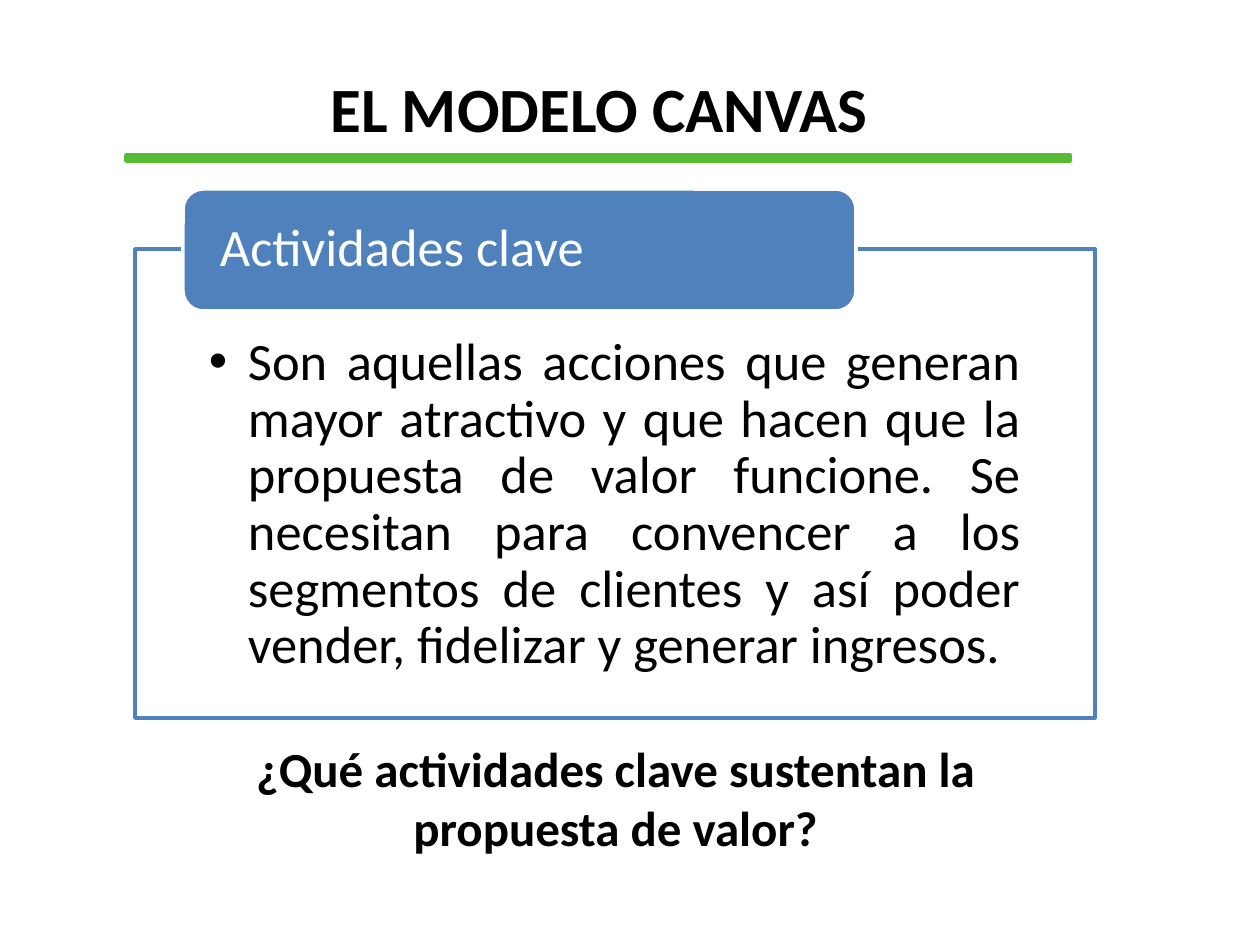
import pptx
import pptx.util
import pptx.dml.color
import pptx.enum.shapes
import pptx.enum.text

SCALE = 914400 / 126
SHAPE = pptx.enum.shapes.MSO_SHAPE
ALIGN = pptx.enum.text.PP_ALIGN
ANCHOR = pptx.enum.text.MSO_ANCHOR
GREEN, BLUE, WHITE, BLACK = "57BC32", "4F81BD", "FFFFFF", "000000"


def px(n):
    return pptx.util.Emu(round(n * SCALE))


def color(code):
    return pptx.dml.color.RGBColor.from_string(code)


def place(shape, box):
    shape.left, shape.top, shape.width, shape.height = map(px, box)


def paint(shape, fill, line):
    shape.fill.solid()
    shape.fill.fore_color.rgb = color(fill)
    shape.line.color.rgb = color(line)
    shape.line.width = pptx.util.Pt(2)


def block(slide, kind, box, fill, line):
    shape = slide.shapes.add_shape(kind, *map(px, box))
    shape.shadow.inherit = False
    paint(shape, fill, line)
    return shape


def write(shape, text, size, hue, align, anchor, insets, bold=False):
    """Fill a shape with one paragraph; insets are left, top, right, bottom."""
    frame = shape.text_frame
    frame.text = text
    frame.word_wrap = True
    frame.auto_size = pptx.enum.text.MSO_AUTO_SIZE.NONE
    frame.vertical_anchor = anchor
    (frame.margin_left, frame.margin_top,
     frame.margin_right, frame.margin_bottom) = map(px, insets)
    para = frame.paragraphs[0]
    para.alignment = align
    para.space_before = pptx.util.Pt(0)
    font = para.runs[0].font
    font.name = "Calibri"
    font.size = pptx.util.Pt(size)
    font.bold = bold
    font.color.rgb = color(hue)
    return para


def header(slide, box):
    left, top, width, height = box
    block(slide, SHAPE.RECTANGLE, (left, top + 92, width, 6), GREEN, GREEN)
    title = slide.shapes.title
    place(title, (left + 158, top, 630, 89))
    write(title, "EL MODELO CANVAS", 36, BLACK, ALIGN.CENTER, ANCHOR.TOP,
          (13, 6, 13, 6), True)


def panel(slide, box):
    left, top, width, height = box
    body = slide.placeholders[1]
    place(body, (left, top + 60, width, height - 60))
    paint(body, WHITE, BLUE)
    para = write(
        body,
        "Son aquellas acciones que generan mayor atractivo y que hacen que "
        "la propuesta de valor funcione. Se necesitan para convencer a los "
        "segmentos de clientes y así poder vender, fidelizar y generar "
        "ingresos.",
        30, BLACK, ALIGN.JUSTIFY, ANCHOR.TOP, (74, 86, 74, 29))
    para.line_spacing = 0.9
    props = para._p.get_or_add_pPr()
    props.set("marL", str(px(39)))
    props.set("indent", str(px(-39)))

    tab = block(slide, SHAPE.ROUNDED_RECTANGLE, (left + 48, top, 673, 122),
                BLUE, WHITE)
    para = write(tab, "Actividades clave", 30, WHITE, ALIGN.LEFT,
                 ANCHOR.MIDDLE, (31, 0, 31, 0))
    para.line_spacing = 0.9


def question(slide, box):
    note = slide.shapes.add_textbox(*map(px, box))
    write(note, "¿Qué actividades clave sustentan la propuesta de valor?",
          28, BLACK, ALIGN.CENTER, ANCHOR.TOP, (13, 6, 13, 6), True)


def main():
    deck = pptx.Presentation()
    deck.slide_width, deck.slide_height = px(1260), px(945)
    slide = deck.slides.add_slide(deck.slide_layouts[1])
    header(slide, (126, 63, 944, 98))
    panel(slide, (135, 189, 960, 529))
    question(slide, (136, 733, 959, 131))
    deck.save("out.pptx")


if __name__ == "__main__":
    main()
